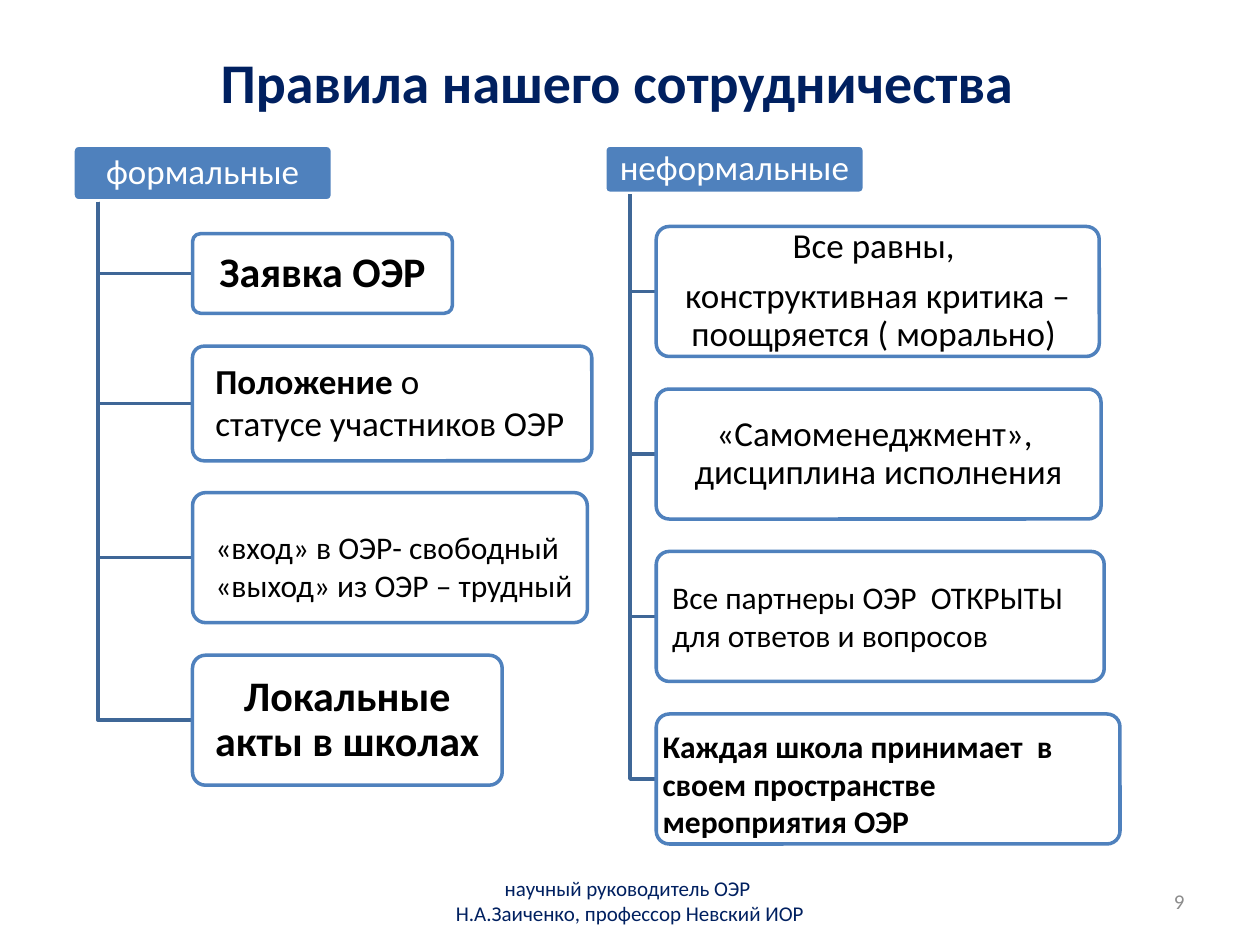
from lxml import etree
from pptx import Presentation
from pptx.dml.color import RGBColor
from pptx.enum import shapes, text
from pptx.oxml import ns
from pptx.util import Pt

COLORS = {"navy": "002060", "blue": "4F81BD", "branch": "3F6797",
          "white": "FFFFFF", "black": "000000", "gray": "8C8C8C"}
CENTER, LEFT, RIGHT = text.PP_ALIGN.CENTER, text.PP_ALIGN.LEFT, text.PP_ALIGN.RIGHT


def write(shape, wording, size, color, bold=False, align=CENTER,
          anchor=text.MSO_ANCHOR.MIDDLE, wrap=True):
    frame = shape.text_frame
    frame.text = wording
    frame.word_wrap = wrap
    frame.vertical_anchor = anchor
    for paragraph in frame.paragraphs:
        paragraph.alignment = align
        for run in paragraph.runs:
            run.font.name = "Calibri"
            run.font.size = Pt(size)
            run.font.bold = bold
            run.font.color.rgb = RGBColor.from_string(COLORS[color])
    return frame


def add_box(box, fill, line, wording, size, color, bold=False):
    """Add a rounded box with tight, centred text."""
    shape = slide.shapes.add_shape(shapes.MSO_SHAPE.ROUNDED_RECTANGLE, *map(Pt, box))
    shape.adjustments[0] = 0.1
    shape.shadow.inherit = False
    shape.fill.solid()
    shape.fill.fore_color.rgb = RGBColor.from_string(COLORS[fill])
    shape.line.color.rgb = RGBColor.from_string(COLORS[line])
    shape.line.width = Pt(2)
    if wording:
        frame = write(shape, wording, size, color, bold)
        frame.margin_left = frame.margin_right = Pt(3)
        frame.margin_top = frame.margin_bottom = Pt(2)
        for paragraph in frame.paragraphs:
            paragraph.line_spacing = 0.9
            paragraph.space_after = Pt(size * 0.35)
    return shape


prs = Presentation()
prs.slide_width, prs.slide_height = Pt(720), Pt(540)
slide = prs.slides.add_slide(prs.slide_layouts[5])

title = slide.shapes.title
title.left, title.top, title.width, title.height = Pt(36), Pt(21.6), Pt(648), Pt(49.7)
write(title, "Правила нашего сотрудничества  ", 32, "navy", bold=True)

# Each rule: top, width, height, wording, size, bold
branches = [
    {"heading": "формальные", "left": 41.7, "height": 31.8, "rules_left": 110, "rules": [
        (133.5, 148.5, 45.5, "Заявка ОЭР", 24, True),
        (197.8, 228.2, 65.5, "", 20, False),
        (281.5, 225.6, 74.3, "", 18, False),
        (374.4, 177, 74.3, "Локальные акты в школах", 24, True)]},
    {"heading": "неформальные", "left": 345.6, "height": 27.5, "rules_left": 375, "rules": [
        (129.4, 253.2, 74.3,
         "Все равны, \nконструктивная критика – поощряется ( морально) ", 20, False),
        (222.3, 254.2, 74.3, "«Самоменеджмент», \vдисциплина исполнения", 20, False),
        (315.1, 256, 74.3, "", 18, False),
        (408, 265, 74.3, "", 18, False)]},
]
heading_top, heading_width = 83, 148.3
for branch in branches:
    add_box((branch["left"], heading_top, heading_width, branch["height"]),
            "blue", "white", branch["heading"], 20, "white")
    trunk = Pt(branch["left"] + heading_width / 10 - 0.4)
    trunk_top = Pt(heading_top + branch["height"] + 0.4)
    rules_left = branch["rules_left"]
    for top, width, height, wording, size, bold in branch["rules"]:
        middle = Pt(top + height / 2)
        builder = slide.shapes.build_freeform(trunk, trunk_top)
        builder.add_line_segments([(trunk, middle), (Pt(rules_left), middle)], close=False)
        elbow = builder.convert_to_shape()
        elbow.shadow.inherit = False
        elbow.fill.background()
        elbow.line.color.rgb = RGBColor.from_string(COLORS["branch"])
        elbow.line.width = Pt(2)

        rule = add_box((rules_left, top, width, height), "white", "blue",
                       wording, size, "black", bold)
        fill_color = rule.fill._xPr.find(ns.qn("a:solidFill"))[0]
        etree.SubElement(fill_color, ns.qn("a:alpha"), val="90000")

# Left-aligned rules: box, wording, size, bold, wrap
captions = [
    ((116, 202, 232.6, 80), "Положение о\nстатусе участников ОЭР", 20, False, True),
    ((116, 298, 230, 51), "«вход» в ОЭР- свободный\n«выход» из ОЭР – трудный", 18, False, False),
    ((371.5, 411.8, 278, 72.7),
     "Каждая школа принимает  в\nсвоем пространстве \vмероприятия ОЭР", 18, True, True),
    ((377, 326.8, 245, 51), "Все партнеры ОЭР  ОТКРЫТЫ\nдля ответов и вопросов", 18, False, False),
]
for box, wording, size, bold, wrap in captions:
    caption = slide.shapes.add_textbox(*map(Pt, box))
    frame = write(caption, wording, size, "black", bold, LEFT, text.MSO_ANCHOR.TOP, wrap)
    if wording.startswith("Положение"):
        statute = frame.paragraphs[0]
        statute.runs[0].text = "Положение "
        statute.runs[0].font.bold = True
        about = statute.add_run()
        about.text = "о"
        about.font.name, about.font.size = "Calibri", Pt(size)
        about.font.color.rgb = RGBColor.from_string(COLORS["black"])

footer = slide.shapes.add_textbox(Pt(246), Pt(500.2), Pt(228), Pt(28.8))
write(footer, "научный руководитель ОЭР \vН.А.Заиченко, профессор Невский ИОР", 12, "navy")
page_number = slide.shapes.add_textbox(Pt(516), Pt(500.5), Pt(168), Pt(28.8))
write(page_number, "9", 12, "gray", align=RIGHT)

prs.save("out.pptx")
